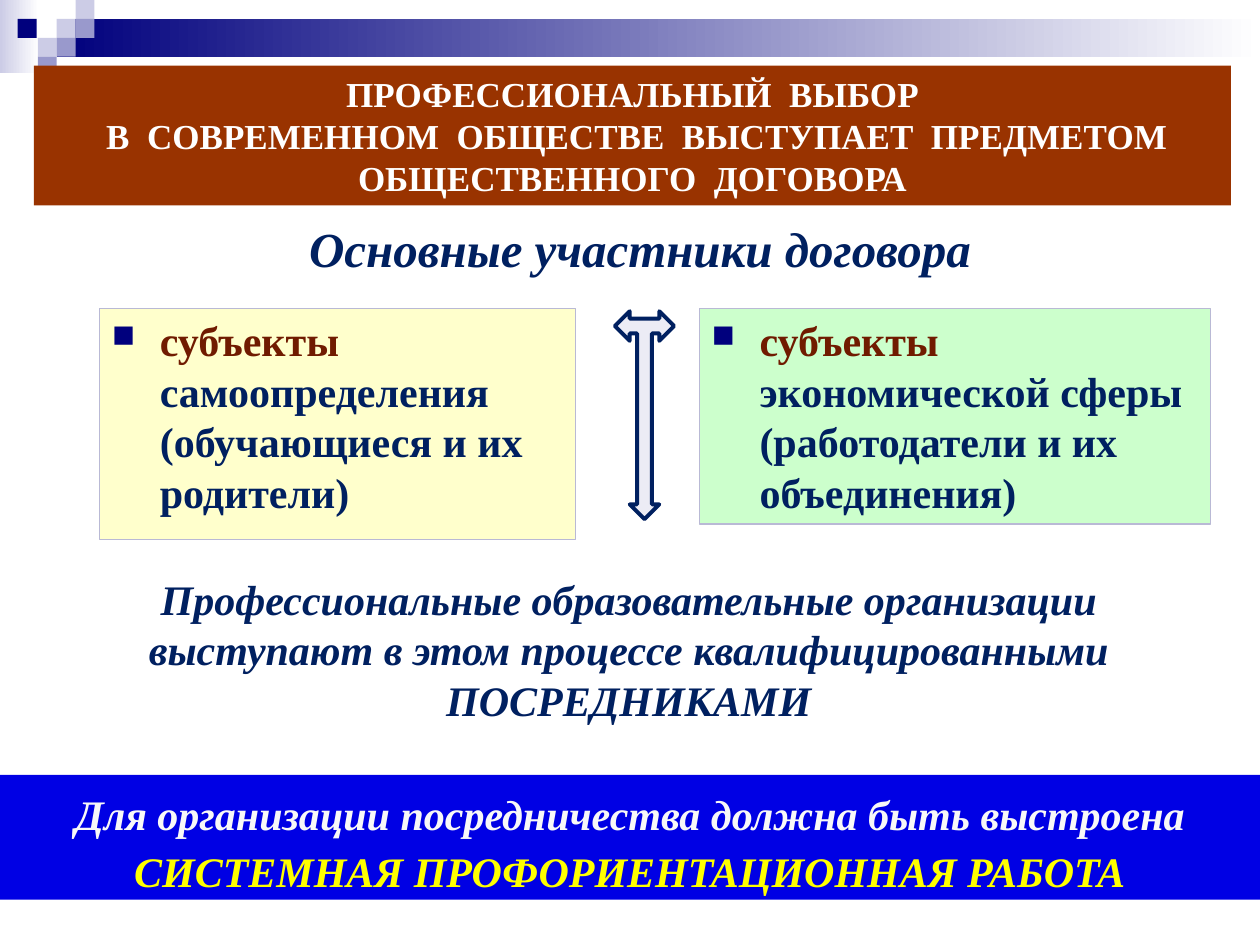
from typing import NamedTuple

from lxml import etree
from pptx import Presentation
from pptx.dml.color import RGBColor
from pptx.enum.shapes import MSO_SHAPE as Preset
from pptx.enum.text import MSO_ANCHOR as Anchor, PP_ALIGN as Align
from pptx.oxml.ns import qn
from pptx.util import Inches, Pt

FONT = "Times New Roman"
NAVY, DEEP_BLUE, MAROON = "00007D", "002060", "701B00"
LILAC, VIOLET, WHITE = "CCCCE6", "9999CC", "FFFFFF"


class Area(NamedTuple):
    left: float
    top: float
    width: float
    height: float


class Span(NamedTuple):
    text: str
    color: str


class Party(NamedTuple):
    area: Area
    fill: str
    description: str


TILE = 0.15
TILES = [
    (0.45, 0.15, LILAC), (0.6, 0, LILAC), (0.6, 0.15, VIOLET), (0.3, 0.3, LILAC),
    (0.14, 0.15, NAVY), (0.45, 0.3, VIOLET), (0.3, 0.45, VIOLET),
]
PARTIES = [
    Party(Area(0.79, 2.45, 3.78, 1.83), "FFFFCC",
          "самоопределения (обучающиеся и их родители)"),
    Party(Area(5.55, 2.45, 4.06, 1.71), "CCFFCC",
          "экономической сферы (работодатели и их объединения)"),
]


def rgb(color: str) -> RGBColor:
    return RGBColor.from_string(color)


def add_box(page, area: Area, fill: str | None = None, line: str | None = None,
            line_width: float = 0.75, preset=Preset.RECTANGLE):
    box = page.shapes.add_shape(preset, *map(Inches, area))
    box.shadow.inherit = False
    if fill:
        box.fill.solid()
        box.fill.fore_color.rgb = rgb(fill)
    else:
        box.fill.background()
    if line:
        box.line.color.rgb = rgb(line)
        box.line.width = Pt(line_width)
    else:
        box.line.fill.background()
    return box


def add_fade(page, area: Area, color: str) -> None:
    """Draw a rectangle that fades to white from left to right."""
    box = add_box(page, area, color)
    box.fill.gradient()
    box.fill.gradient_angle = 0
    for stop, shade, position in zip(box.fill.gradient_stops, (color, WHITE), (0, 1)):
        stop.color.rgb = rgb(shade)
        stop.position = position


def write(box, paragraphs: list[list[Span]], *, size: float, italic: bool = False,
          align=Align.CENTER, anchor=Anchor.TOP, line_spacing: float | None = None,
          space_before: float = 0) -> None:
    """Fill a box with bold text, one list of spans per paragraph."""
    frame = box.text_frame
    frame.word_wrap = True
    frame.vertical_anchor = anchor
    for index, spans in enumerate(paragraphs):
        para = frame.add_paragraph() if index else frame.paragraphs[0]
        para.alignment = align
        para.space_before = Pt(space_before)
        para.line_spacing = line_spacing
        for text, color in spans:
            for number, part in enumerate(text.split("\n")):
                if number:
                    para.add_line_break()
                span = para.add_run()
                span.text = part
                font = span.font
                font.name, font.size = FONT, Pt(size)
                font.bold, font.italic = True, italic
                font.color.rgb = rgb(color)


def indent(para, left: float, first: float = 0) -> None:
    properties = para._p.get_or_add_pPr()
    properties.set("marL", str(Inches(left)))
    properties.set("indent", str(Inches(first)))


def add_bullet(para) -> None:
    indent(para, 0.38, -0.38)
    properties = para._p.get_or_add_pPr()
    color = etree.SubElement(properties, qn("a:buClr"))
    etree.SubElement(color, qn("a:srgbClr"), val=NAVY)
    etree.SubElement(properties, qn("a:buSzPct"), val="75000")
    etree.SubElement(properties, qn("a:buChar"), char="■")


def add_party(page, party: Party) -> None:
    box = add_box(page, party.area, party.fill, "B9B9D5")
    write(box, [[Span("субъекты ", MAROON), Span(party.description, DEEP_BLUE)]],
          size=24, align=Align.LEFT, space_before=3)
    add_bullet(box.text_frame.paragraphs[0])


def add_arrow(page) -> None:
    arrow = add_box(page, Area(4.88, 2.47, 0.47, 1.65), "D8D8EC", DEEP_BLUE, 2.25,
                    Preset.LEFT_RIGHT_UP_ARROW)
    arrow.rotation = 180
    color = arrow._element.spPr.find(qn("a:solidFill")).find(qn("a:srgbClr"))
    etree.SubElement(color, qn("a:alpha"), val="48000")


def main() -> None:
    deck = Presentation()
    deck.slide_width, deck.slide_height = Inches(10), Inches(7.5)
    page = deck.slides.add_slide(deck.slide_layouts[6])

    add_fade(page, Area(0, 0, 0.31, 0.58), LILAC)
    add_fade(page, Area(0.45, 0.15, 9.55, 0.3), NAVY)
    for left, top, color in TILES:
        add_box(page, Area(left, top, TILE, TILE), color)

    subtitle = add_box(page, Area(1.81, 1.78, 6.54, 0.47))
    write(subtitle, [[Span("Основные участники договора", DEEP_BLUE)]],
          size=28, italic=True, anchor=Anchor.BOTTOM)

    for party in PARTIES:
        add_party(page, party)

    mediators = add_box(page, Area(0, 4.54, 9.69, 1.26))
    write(mediators, [[Span("Профессиональные образовательные организации выступают "
                            "в этом процессе квалифицированными ПОСРЕДНИКАМИ", DEEP_BLUE)]],
          size=24, italic=True, anchor=Anchor.BOTTOM)
    indent(mediators.text_frame.paragraphs[0], 0.29)

    title = add_box(page, Area(0.27, 0.52, 9.5, 1.11), "993300")
    write(title, [[Span("ПРОФЕССИОНАЛЬНЫЙ  ВЫБОР\n В  СОВРЕМЕННОМ  ОБЩЕСТВЕ  ВЫСТУПАЕТ  "
                        "ПРЕДМЕТОМ ОБЩЕСТВЕННОГО  ДОГОВОРА", WHITE)]],
          size=20, anchor=Anchor.MIDDLE)

    add_arrow(page)

    conclusion = add_box(page, Area(0, 6.15, 10, 0.99), "0000E4")
    write(conclusion, [
        [Span("Для организации посредничества должна быть выстроена", "F8F8F8")],
        [Span("СИСТЕМНАЯ ПРОФОРИЕНТАЦИОННАЯ РАБОТА", "FFFF00")],
    ], size=24, italic=True, line_spacing=1.14)

    deck.save("out.pptx")


if __name__ == "__main__":
    main()
